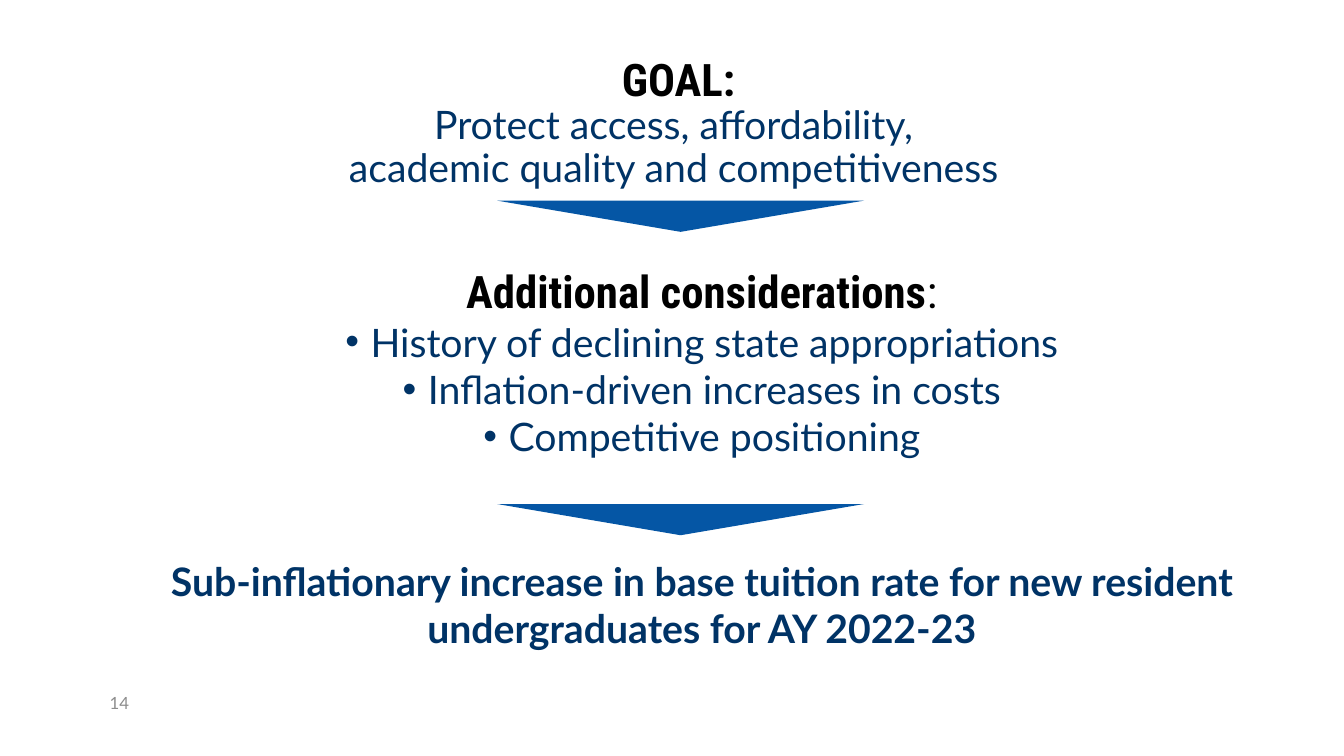
"""Build the tuition goal slide: goal, considerations and resulting rate."""
import pptx
import pptx.dml.color
import pptx.enum.shapes
import pptx.enum.text
import pptx.oxml
import pptx.oxml.ns
import pptx.util

Inches = pptx.util.Inches
Pt = pptx.util.Pt
PP_ALIGN = pptx.enum.text.PP_ALIGN

COLORS = {"heading": "000000", "text": "003366", "arrow": "0556A5", "number": "8C8C8C"}
HEADING = {"name": "Roboto Condensed", "size": 32, "color": "heading", "bold": True}
HEADING_LIGHT = {**HEADING, "bold": False}
TEXT = {"name": "Lato", "size": 28, "color": "text", "bold": False}
TEXT_BOLD = {**TEXT, "bold": True}
NUMBER = {"name": "Lato", "size": 12, "color": "number", "bold": False}


def rgb(name):
    return pptx.dml.color.RGBColor.from_string(COLORS[name])


def place(shape, left, top, width, height):
    shape.left, shape.top = Inches(left), Inches(top)
    shape.width, shape.height = Inches(width), Inches(height)


def set_bullet(paragraph, character=None):
    properties = paragraph._p.get_or_add_pPr()
    indent = Inches(0.25) if character else 0
    properties.set("marL", str(indent))
    properties.set("indent", str(-indent))
    if character:
        font = pptx.oxml.parse_xml(f'<a:buFont {pptx.oxml.ns.nsdecls("a")} typeface="Arial"/>')
        properties.append(font)
    tag = f'buChar char="{character}"' if character else "buNone"
    name, _, attributes = tag.partition(" ")
    properties.append(pptx.oxml.parse_xml(
        f'<a:{name} {pptx.oxml.ns.nsdecls("a")} {attributes}/>'))


def write(shape, paragraphs, alignment=PP_ALIGN.CENTER, line_spacing=1.0, bullets=False):
    frame = shape.text_frame
    frame.word_wrap = True
    frame.auto_size = pptx.enum.text.MSO_AUTO_SIZE.NONE
    for index, pieces in enumerate(paragraphs):
        paragraph = frame.add_paragraph() if index else frame.paragraphs[0]
        if bullets:
            set_bullet(paragraph, "•" if index else None)
        paragraph.alignment = alignment
        paragraph.line_spacing = line_spacing
        paragraph.space_before = Pt(0)
        for text, style in pieces:
            run = paragraph.add_run()
            run.text = text
            run.font.name = style["name"]
            run.font.size = Pt(style["size"])
            run.font.bold = style["bold"]
            run.font.color.rgb = rgb(style["color"])


def add_text(slide, box, text, style, alignment):
    shape = slide.shapes.add_textbox(*map(Inches, box))
    write(shape, [[(text, style)]], alignment)


def add_down_arrow(slide, top):
    shape = slide.shapes.add_shape(
        pptx.enum.shapes.MSO_SHAPE.ISOSCELES_TRIANGLE,
        Inches(4.93), Inches(top), Inches(3.64), Inches(0.31))
    shape.rotation = 180
    shape.shadow.inherit = False
    shape.fill.solid()
    shape.fill.fore_color.rgb = rgb("arrow")
    shape.line.fill.background()


def add_goal(slide):
    title = slide.shapes.title
    place(title, 0.13, 0.48, 13.2, 1.92)
    title.text_frame.vertical_anchor = pptx.enum.text.MSO_ANCHOR.MIDDLE
    title.text_frame.margin_bottom = Inches(0.47)
    write(title, [
        [("GOAL:", HEADING)],
        [("Protect access, affordability, ", TEXT)],
        [("academic quality and competitiveness ", TEXT)],
    ], line_spacing=0.9)


def add_considerations(slide):
    body = slide.placeholders[1]
    place(body, 0.94, 2.57, 12.04, 2.36)
    items = ["History of declining state appropriations",
             "Inflation-driven increases in costs",
             "Competitive positioning"]
    heading = [("Additional considerations", HEADING), (":", HEADING_LIGHT)]
    write(body, [heading] + [[(item, TEXT)] for item in items], bullets=True)


def main():
    presentation = pptx.Presentation()
    presentation.slide_width = Inches(13.33)
    presentation.slide_height = Inches(7.5)
    slide = presentation.slides.add_slide(presentation.slide_layouts[1])
    add_goal(slide)
    add_considerations(slide)
    add_text(slide, (1.59, 5.48, 10.74, 1.58),
             "Sub-inflationary increase in base tuition rate for new resident "
             "undergraduates for AY 2022-23", TEXT_BOLD, PP_ALIGN.CENTER)
    for top in (1.99, 5):
        add_down_arrow(slide, top)
    add_text(slide, (0.99, 6.82, 3, 0.4), "14", NUMBER, PP_ALIGN.LEFT)
    presentation.save("out.pptx")


if __name__ == "__main__":
    main()
